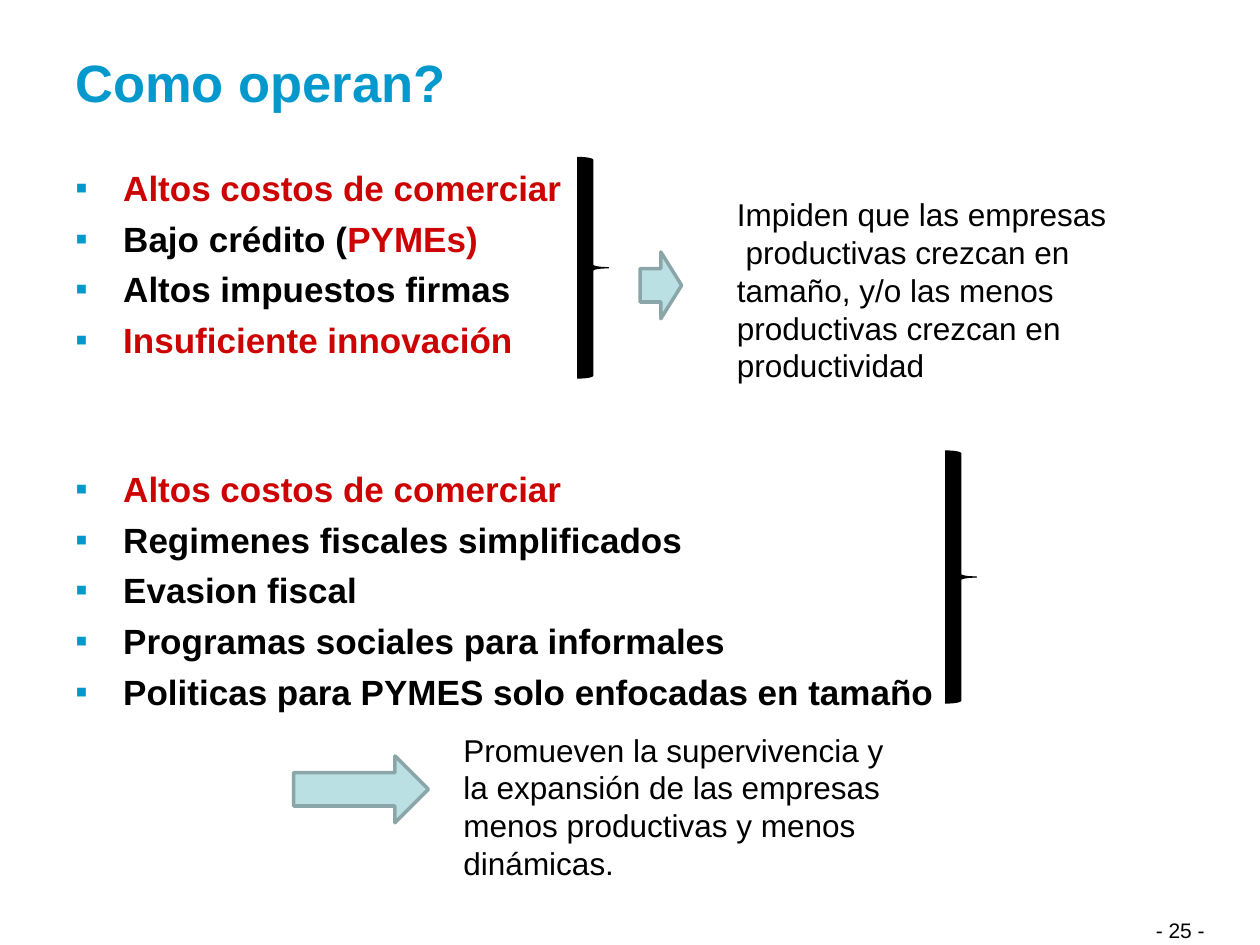
from dataclasses import dataclass

from lxml.etree import SubElement
from pptx import Presentation
from pptx.dml.color import RGBColor
from pptx.enum.shapes import MSO_SHAPE
from pptx.enum.text import MSO_ANCHOR, PP_ALIGN
from pptx.oxml.ns import qn
from pptx.util import Inches, Pt


@dataclass(frozen=True)
class Theme:
    font: str = "Arial"
    blue: str = "0399CD"
    red: str = "CD0303"
    black: str = "000000"
    pale: str = "BBE0E3"
    edge: str = "8AA6A8"
    title: int = 30
    list: int = 20
    note: int = 18
    page: int = 12


THEME = Theme()
RED, BLACK = THEME.red, THEME.black

CAUSES = [
    [
        [("Altos costos de comerciar", RED)],
        [("Bajo crédito (", BLACK), ("PYMEs)", RED)],
        [("Altos impuestos firmas", BLACK)],
        [("Insuficiente innovación", RED)],
    ],
    [
        [("Altos costos de comerciar", RED)],
        [("Regimenes fiscales simplificados", BLACK)],
        [("Evasion fiscal", BLACK)],
        [("Programas sociales para informales", BLACK)],
        [("Politicas para PYMES solo enfocadas en tamaño", BLACK)],
    ],
]


def place(box):
    return [Inches(n) for n in box]


def style(font, size, color, bold=False):
    font.name = THEME.font
    font.size = Pt(size)
    font.bold = bold
    font.color.rgb = RGBColor.from_string(color)


def add_frame(slide, box):
    frame = slide.shapes.add_textbox(*place(box)).text_frame
    frame.word_wrap = True
    return frame


def add_text(slide, box, text, size, color=BLACK, bold=False):
    frame = add_frame(slide, box)
    frame.text = text
    for para in frame.paragraphs:
        for run in para.runs:
            style(run.font, size, color, bold)
    return frame


def set_bullet(para):
    props = para._p.get_or_add_pPr()
    indent = Inches(0.38)
    props.set("marL", str(indent))
    props.set("indent", str(-indent))
    color = SubElement(props, qn("a:buClr"))
    SubElement(color, qn("a:srgbClr")).set("val", THEME.blue)
    SubElement(props, qn("a:buFont")).set("typeface", THEME.font)
    SubElement(props, qn("a:buChar")).set("char", "▪")


def add_list(slide, box, groups):
    frame = add_frame(slide, box)
    para = frame.paragraphs[0]
    for g, group in enumerate(groups):
        for i, item in enumerate(group):
            if g or i:
                para = frame.add_paragraph()
            set_bullet(para)
            if i:
                para.space_before = Pt(5)
            elif g:
                para.space_before = Pt(61)
            for text, color in item:
                run = para.add_run()
                run.text = text
                style(run.font, THEME.list, color, True)


def add_mark(slide, kind, box, fill, line, width):
    mark = slide.shapes.add_shape(kind, *place(box))
    mark.shadow.inherit = False
    mark.fill.solid()
    mark.fill.fore_color.rgb = RGBColor.from_string(fill)
    mark.line.color.rgb = RGBColor.from_string(line)
    mark.line.width = Pt(width)


def add_brace(slide, box):
    add_mark(slide, MSO_SHAPE.RIGHT_BRACE, box, BLACK, BLACK, 0.75)


def add_arrow(slide, box):
    add_mark(slide, MSO_SHAPE.RIGHT_ARROW, box, THEME.pale, THEME.edge, 2)


def add_effect(slide, brace, arrow, note, text):
    add_brace(slide, brace)
    add_arrow(slide, arrow)
    return add_text(slide, note, text, THEME.note)


def build(slide):
    title = add_text(slide, (0.5, 0.3, 9, 0.7), "Como operan?",
                     THEME.title, THEME.blue, True)
    title.vertical_anchor = MSO_ANCHOR.MIDDLE
    add_list(slide, (0.5, 1.27, 9, 5.08), CAUSES)
    growth = add_effect(
        slide, (4.58, 1.25, 0.25, 1.75), (5.08, 2, 0.33, 0.53),
        (5.75, 1.5, 3.16, 1.62),
        "Impiden que las empresas\nproductivas crezcan en tamaño, y/o las "
        "menos productivas crezcan en productividad")
    growth.paragraphs[1]._p.get_or_add_pPr().set("indent", str(Inches(0.07)))
    add_effect(
        slide, (7.5, 3.58, 0.25, 2), (2.33, 6, 1.07, 0.53),
        (3.58, 5.75, 3.58, 1.3),
        "Promueven la supervivencia y la expansión de las empresas "
        "menos productivas y menos dinámicas.")
    page = add_text(slide, (7.08, 7.23, 2.58, 0.27), "- 25 -", THEME.page)
    page.paragraphs[0].alignment = PP_ALIGN.RIGHT


def main():
    deck = Presentation()
    deck.slide_width, deck.slide_height = Inches(10), Inches(7.5)
    build(deck.slides.add_slide(deck.slide_layouts[6]))
    deck.save("out.pptx")


if __name__ == "__main__":
    main()
